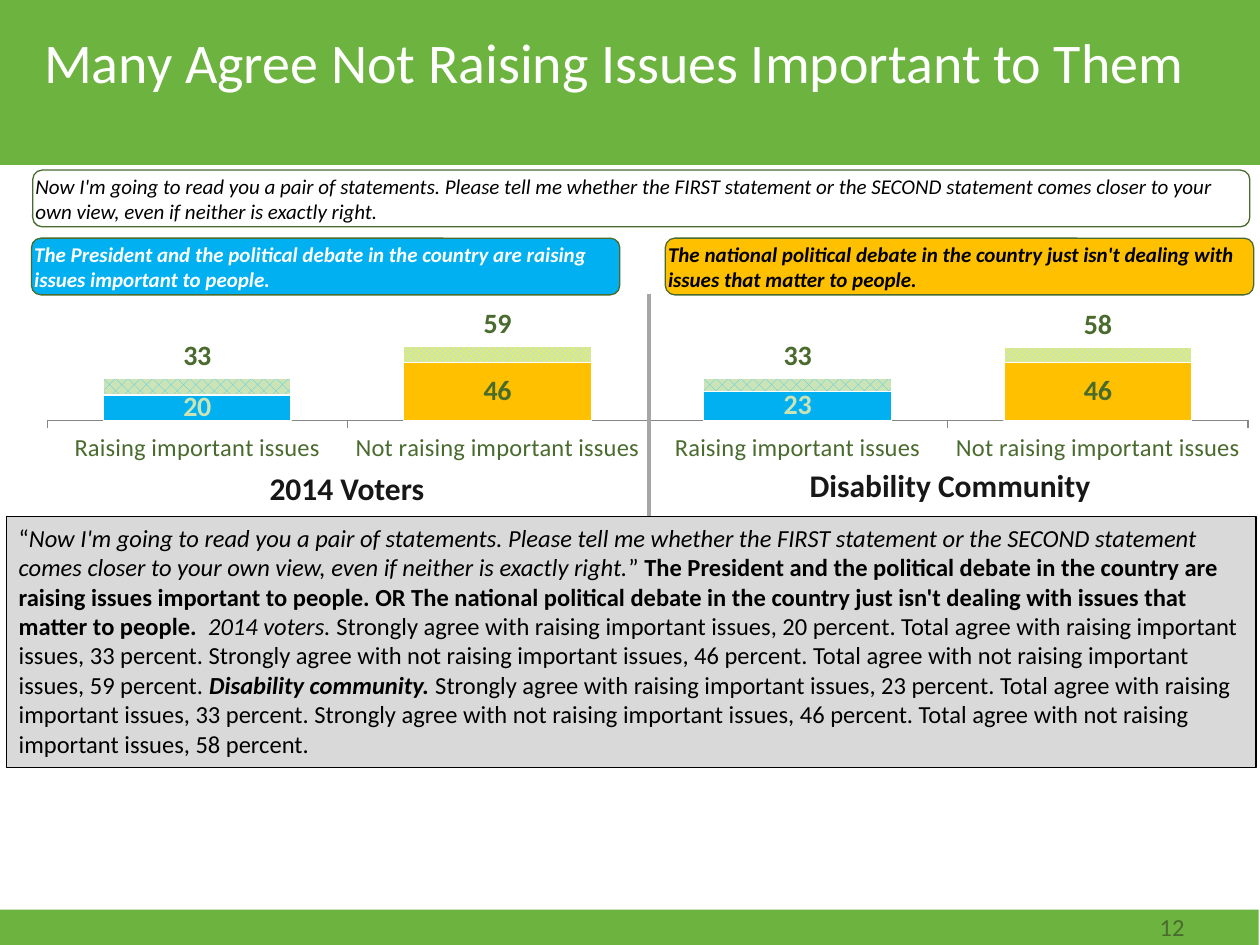
import pptx
import pptx.chart.data
import pptx.dml.color
import pptx.enum.chart
import pptx.enum.dml
import pptx.enum.shapes
import pptx.enum.text
import pptx.oxml
import pptx.oxml.ns
import pptx.util
from lxml import etree

Pt = pptx.util.Pt
RGB = pptx.dml.color.RGBColor.from_string
ALIGN = pptx.enum.text.PP_ALIGN
ANCHOR = pptx.enum.text.MSO_ANCHOR
SHAPE = pptx.enum.shapes.MSO_SHAPE
LABEL = pptx.enum.chart.XL_LABEL_POSITION
PATTERN = pptx.enum.dml.MSO_PATTERN


class Theme:
    font = "Calibri"
    green, dark_green, pale_green = "6DB33F", "496B2E", "CCE3B5"
    blue, cyan, amber, yellow = "00B0F0", "33CCFF", "FFC000", "FFFF00"
    white, black, ink = "FFFFFF", "000000", "171717"
    panel, divider, axis = "D9D9D9", "A6A6A6", "868686"
    title, heading, value, body, note = 32, 18, 16, 14, 12


def add_box(kind, at, fill, line=None):
    box = slide.shapes.add_shape(kind, *map(Pt, at))
    box.shadow.inherit = False
    box.fill.solid()
    box.fill.fore_color.rgb = RGB(fill)
    if line:
        box.line.color.rgb = RGB(line)
        box.line.width = Pt(0.75)
    else:
        box.line.fill.background()
    return box


def write(shape, runs, size, color, bold=False, italic=False, align=ALIGN.LEFT,
          anchor=ANCHOR.MIDDLE, margin=None):
    """Fill a shape with one paragraph; runs are (text, bold, italic) or one string."""
    frame = shape.text_frame
    frame.word_wrap = True
    frame.auto_size = pptx.enum.text.MSO_AUTO_SIZE.NONE
    frame.vertical_anchor = anchor
    if margin is not None:
        frame.margin_left = frame.margin_right = Pt(margin)
        frame.margin_top = frame.margin_bottom = Pt(margin)
    paragraph = frame.paragraphs[0]
    paragraph.alignment = align
    font = paragraph.font
    font.name, font.size, font.color.rgb = Theme.font, Pt(size), RGB(color)
    if isinstance(runs, str):
        font.bold, font.italic = bold, italic
        paragraph.add_run().text = runs
        return
    for text, run_bold, run_italic in runs:
        run = paragraph.add_run()
        run.text = text
        run.font.bold, run.font.italic = run_bold, run_italic


QUESTION = ("Now I'm going to read you a pair of statements. Please tell me whether the FIRST "
            "statement or the SECOND statement comes closer to your own view, even if neither "
            "is exactly right.")
RAISING = ("The President and the political debate in the country are raising issues "
           "important to people.")
NOT_RAISING = ("The national political debate in the country just isn't dealing with issues "
               "that matter to people.")

deck = pptx.Presentation()
deck.slide_width, deck.slide_height = Pt(720), Pt(540)
slide = deck.slides.add_slide(deck.slide_layouts[5])

# Title over the green bands, page number in the lower one
title = slide.shapes.title
for at in [(0, 0, 720, 94.3), (0, 519.8, 719.3, 21.6), (0, 0, 719.3, 21.6)]:
    band = add_box(SHAPE.RECTANGLE, at, Theme.green)
    title.element.addprevious(band.element)
title.left, title.top, title.width, title.height = map(Pt, (18, 12.2, 696.2, 56.9))
write(title, "Many Agree Not Raising Issues Important to Them", Theme.title, Theme.white,
      anchor=ANCHOR.TOP)
page_number = slide.shapes.add_textbox(*map(Pt, (516.2, 517.7, 167.8, 22.3)))
write(page_number, "12", Theme.body, Theme.dark_green, align=ALIGN.RIGHT, anchor=ANCHOR.TOP)

# Chart: strong agreement, the remainder, and an unfilled series carrying the total
# Each series: values, fill (colour or pattern), label position, label colour
series_rows = [
    ((20, None, 23, None), Theme.blue, LABEL.CENTER, Theme.pale_green),
    ((13, None, 10, None), (PATTERN.PERCENT_30, Theme.cyan), None, None),
    ((33, None, 33, None), None, LABEL.INSIDE_BASE, Theme.dark_green),
    ((None, 46, None, 46), Theme.amber, LABEL.CENTER, Theme.dark_green),
    ((None, 13, None, 12), (PATTERN.TRELLIS, Theme.yellow), None, None),
    ((None, 59, None, 58), None, LABEL.INSIDE_BASE, Theme.dark_green),
]
data = pptx.chart.data.CategoryChartData()
data.categories = ["Raising important issues", "Not raising important issues"] * 2
for number, (values, *_) in enumerate(series_rows, 1):
    data.add_series(f"Series {number}", values)
chart = slide.shapes.add_chart(pptx.enum.chart.XL_CHART_TYPE.COLUMN_STACKED,
                               *map(Pt, (10.8, 138.2, 702.7, 264.2)), data).chart
chart.has_legend = chart.has_title = False
chart.font.name, chart.font.size = Theme.font, Pt(Theme.heading)
chart.font.color.rgb = RGB(Theme.dark_green)
plot = chart.plots[0]
plot.gap_width, plot.overlap, plot.vary_by_categories = 60, 100, False

for series, (_, fill, position, label_color) in zip(plot.series, series_rows):
    series_fill = series.format.fill
    if fill is None:
        series_fill.background()
        series.format.line.fill.background()
    else:
        if isinstance(fill, str):
            series_fill.solid()
            series_fill.fore_color.rgb = RGB(fill)
        else:
            series_fill.patterned()
            series_fill.pattern, foreground = fill
            series_fill.fore_color.rgb = RGB(foreground)
            series_fill.back_color.rgb = RGB(Theme.pale_green)
        series.format.line.color.rgb = RGB(Theme.white)
        series.format.line.width = Pt(0.75)
    if position is not None:
        labels = series.data_labels
        labels.show_value, labels.position = True, position
        labels.font.name, labels.font.size = Theme.font, Pt(Theme.value)
        labels.font.bold, labels.font.color.rgb = True, RGB(label_color)

categories, scale = chart.category_axis, chart.value_axis
categories.major_tick_mark = pptx.enum.chart.XL_TICK_MARK.OUTSIDE
categories.tick_labels.font.name = Theme.font
categories.tick_labels.font.size = Pt(Theme.body)
categories.tick_labels.font.color.rgb = RGB(Theme.dark_green)
categories.format.line.color.rgb = RGB(Theme.axis)
scale.minimum_scale, scale.maximum_scale, scale.major_unit = 0, 100, 20
scale.has_major_gridlines = scale.visible = False

qn = pptx.oxml.ns.qn
plot_area = chart.element.find(".//" + qn("c:plotArea"))
for old_layout in plot_area.findall(qn("c:layout")):
    plot_area.remove(old_layout)
layout = etree.Element(qn("c:layout"))
manual = etree.SubElement(layout, qn("c:manualLayout"))
for tag, value in [("layoutTarget", "inner"), ("xMode", "edge"), ("yMode", "edge"),
                   ("x", "0.023"), ("y", "0.114"), ("w", "0.977"), ("h", "0.272")]:
    etree.SubElement(manual, qn("c:" + tag)).set("val", value)
plot_area.insert(0, layout)

# Question, divider, group names and the two statements
question = add_box(SHAPE.ROUNDED_RECTANGLE, (18.7, 97.2, 695.5, 32.4), Theme.white,
                   Theme.dark_green)
write(question, QUESTION, Theme.note, Theme.black, italic=True, margin=0)

divider = slide.shapes.add_connector(pptx.enum.shapes.MSO_CONNECTOR.STRAIGHT,
                                     *map(Pt, (370.8, 167.8, 370.8, 419.8)))
divider.line.color.rgb, divider.line.width = RGB(Theme.divider), Pt(2.25)
etree.SubElement(divider.element.spPr, qn("a:effectLst"))

for name, at in [("2014 Voters", (123.8, 265.7, 149, 25.9)),
                 ("Disability Community", (438.5, 264.2, 208.8, 25.9))]:
    group_name = slide.shapes.add_textbox(*map(Pt, at))
    write(group_name, name, Theme.heading, Theme.ink, bold=True, align=ALIGN.CENTER)

for text, left, fill, color in [(RAISING, 18, Theme.blue, Theme.white),
                                (NOT_RAISING, 380.2, Theme.amber, Theme.black)]:
    statement = add_box(SHAPE.ROUNDED_RECTANGLE, (left, 136.1, 336.2, 32.4), fill,
                        Theme.dark_green)
    write(statement, text, Theme.note, color, bold=True, italic=True, margin=0)

# Results in words
results = "Strongly agree with {0}, {1} percent. Total agree with {0}, {2} percent."
voters, community = (
    " ".join(results.format(view, *shares) for view, shares in
             zip(("raising important issues", "not raising important issues"), pair))
    for pair in (((20, 33), (46, 59)), ((23, 33), (46, 58))))
summary = add_box(SHAPE.RECTANGLE, (3.6, 295.2, 714.2, 143.3), Theme.panel, Theme.black)
write(summary, [
    ("“", False, False),
    (QUESTION, False, True),
    ("” ", False, False),
    (f"{RAISING} OR {NOT_RAISING}  ", True, False),
    ("2014 voters. ", False, True),
    (voters + " ", False, False),
    ("Disability community.", True, True),
    (" " + community, False, False),
], Theme.body, Theme.black, anchor=ANCHOR.TOP)

deck.save("out.pptx")
